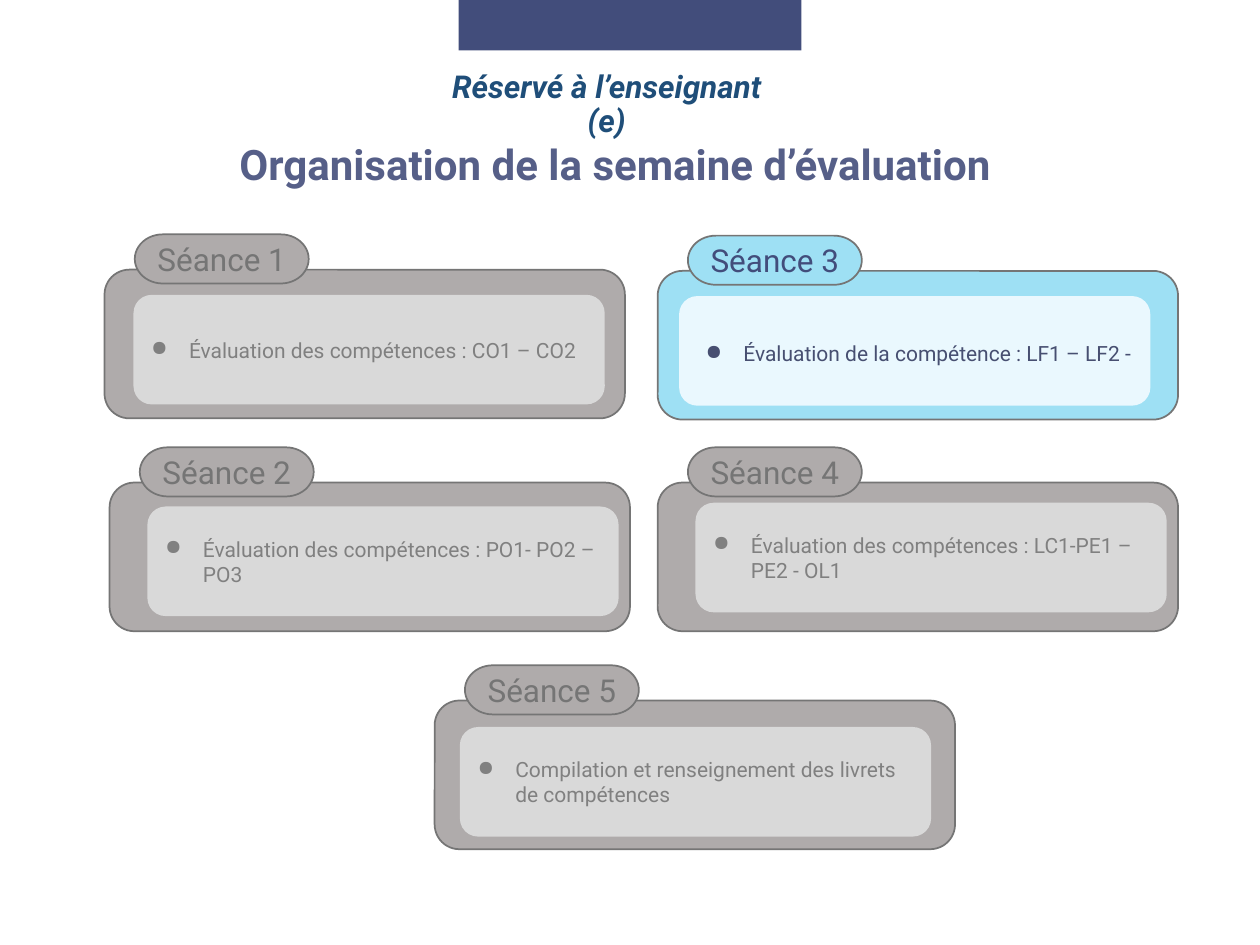
from pptx import Presentation
from pptx.dml.color import RGBColor
from pptx.enum.shapes import MSO_SHAPE
from pptx.enum.text import MSO_ANCHOR, PP_ALIGN
from pptx.oxml.ns import qn
from pptx.util import Inches, Pt
from lxml.etree import SubElement

FONT = "Roboto"
NAVY = RGBColor(0x42, 0x4D, 0x7B)
TITLE = RGBColor(0x56, 0x5F, 0x88)
SUBTITLE = RGBColor(0x1F, 0x4E, 0x79)
BORDER = RGBColor(0x75, 0x75, 0x75)
GREY = RGBColor(0xAF, 0xAB, 0xAB)
GREY_PANEL = RGBColor(0xD9, 0xD9, 0xD9)
GREY_TEXT = RGBColor(0x80, 0x80, 0x80)
BLUE = RGBColor(0x9E, 0xE0, 0xF4)
BLUE_PANEL = RGBColor(0xEA, 0xF8, 0xFE)
BLUE_TEXT = RGBColor(0x47, 0x4F, 0x71)

CARD_SIZE = (4.13, 1.18)
LABEL_SIZE = (1.38, 0.39)
PANEL_SIZE = (3.74, 0.87)
LABEL_OFFSET = (0.24, -0.28)

SESSIONS = [
    ("Séance 2", (0.87, 3.83), (1.17, 4.02),
     "Évaluation des compétences : PO1- PO2 – PO3"),
    ("Séance 4", (5.22, 3.83), (5.52, 3.99),
     "Évaluation des compétences : LC1-PE1 – PE2 - OL1"),
    ("Séance 5", (3.45, 5.56), (3.65, 5.77),
     "Compilation et renseignement des livrets de compétences"),
    ("Séance 1", (0.83, 2.14), (1.06, 2.34),
     "Évaluation des compétences : CO1 – CO2"),
]


def add_box(slide, kind, pos, extent, fill=None, line=None):
    sp = slide.shapes.add_shape(kind, *map(Inches, pos + extent))
    sp.shadow.inherit = False
    if fill is None:
        sp.fill.background()
    else:
        sp.fill.solid()
        sp.fill.fore_color.rgb = fill
    if line is None:
        sp.line.fill.background()
    else:
        sp.line.color.rgb = line
        sp.line.width = Pt(1)
    return sp


def add_bullet(p, indent=0.3):
    pPr = p._p.get_or_add_pPr()
    pPr.set("marL", str(Inches(indent)))
    pPr.set("indent", str(-Inches(indent)))
    SubElement(pPr, qn("a:buChar")).set("char", "●")


def write(sp, text, size=12, color=GREY_TEXT, bold=False, italic=False,
          align=PP_ALIGN.CENTER, anchor=MSO_ANCHOR.MIDDLE, spacing=None,
          wrap=True, bullet=False):
    tf = sp.text_frame
    tf.word_wrap = wrap
    tf.vertical_anchor = anchor
    p = tf.paragraphs[0]
    p.alignment = align
    if spacing:
        p.line_spacing = spacing
    if bullet:
        add_bullet(p)
    r = p.add_run()
    r.text = text
    r.font.name = FONT
    r.font.size = Pt(size)
    r.font.bold = bold
    r.font.italic = italic
    r.font.color.rgb = color


def add_heading(slide, text, pos, extent, **fmt):
    sp = slide.shapes.add_textbox(*map(Inches, pos + extent))
    write(sp, text, bold=True, spacing=0.9, **fmt)


def add_panel(slide, pos, text=None, fill=None, color=GREY_TEXT):
    sp = add_box(slide, MSO_SHAPE.ROUNDED_RECTANGLE, pos, PANEL_SIZE, fill)
    if text:
        write(sp, text, color=color, align=PP_ALIGN.LEFT, bullet=True)


def add_card(slide, name, pos, fill=GREY, color=BORDER):
    add_box(slide, MSO_SHAPE.ROUNDED_RECTANGLE, pos, CARD_SIZE, fill, BORDER)
    label_pos = (pos[0] + LABEL_OFFSET[0], pos[1] + LABEL_OFFSET[1])
    sp = add_box(slide, MSO_SHAPE.FLOWCHART_TERMINATOR, label_pos, LABEL_SIZE,
                 fill, BORDER)
    write(sp, name, size=18, color=color, wrap=False)


def main():
    prs = Presentation()
    prs.slide_width = Inches(10)
    prs.slide_height = Inches(7.5)
    slide = prs.slides.add_slide(prs.slide_layouts[6])

    add_heading(slide, "Organisation de la semaine d’évaluation",
                (0.57, 0.93), (8.62, 0.79), size=24, color=TITLE)
    add_box(slide, MSO_SHAPE.RECTANGLE, (3.64, 0), (2.72, 0.4), NAVY)
    add_heading(slide, "Réservé à l’enseignant (e)", (3.36, 0.52), (2.91, 0.67),
                size=18, color=SUBTITLE, italic=True, anchor=MSO_ANCHOR.TOP)

    for name, card_pos, panel_pos, text in SESSIONS:
        add_card(slide, name, card_pos)
        add_panel(slide, panel_pos, text, GREY_PANEL)

    add_card(slide, "Séance 3", (5.22, 2.15), BLUE, NAVY)
    add_panel(slide, (5.39, 2.35), fill=BLUE_PANEL)
    add_panel(slide, (5.46, 2.37), "Évaluation de la compétence : LF1 – LF2 -",
              color=BLUE_TEXT)

    prs.save("out.pptx")


if __name__ == "__main__":
    main()
